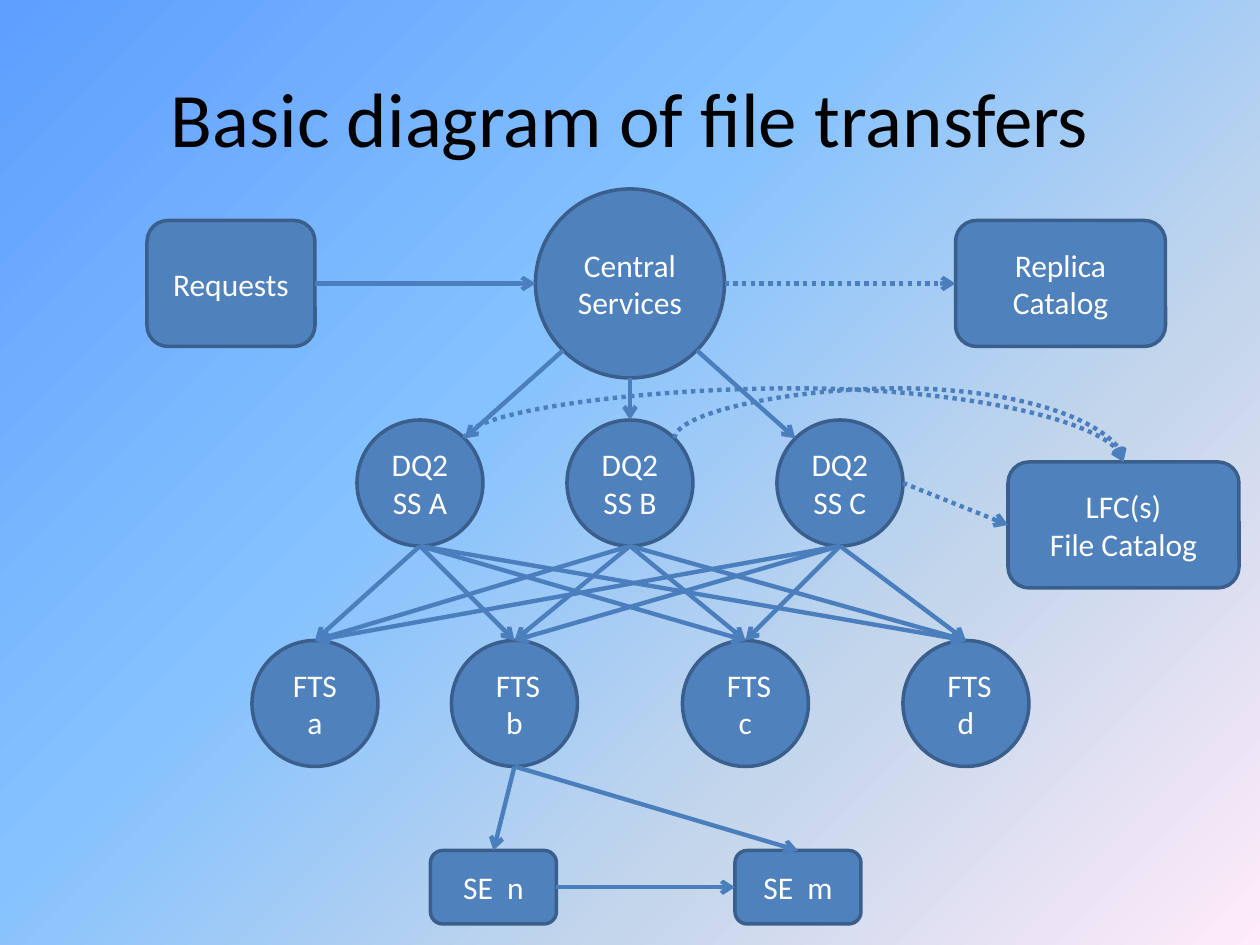
from copy import deepcopy

from lxml import etree
from pptx import Presentation
from pptx.dml.color import RGBColor
from pptx.enum.dml import MSO_LINE
from pptx.enum.shapes import MSO_CONNECTOR, MSO_SHAPE
from pptx.enum.text import MSO_ANCHOR, PP_ALIGN
from pptx.oxml.ns import qn
from pptx.util import Pt

ELLIPSE, ROUNDED = MSO_SHAPE.OVAL, MSO_SHAPE.ROUNDED_RECTANGLE
STRAIGHT, CURVE = MSO_CONNECTOR.STRAIGHT, MSO_CONNECTOR.CURVE
DOTTED = MSO_LINE.ROUND_DOT
CENTER, MIDDLE = PP_ALIGN.CENTER, MSO_ANCHOR.MIDDLE

FONT = "Calibri"
BLACK = RGBColor(0x00, 0x00, 0x00)
WHITE = RGBColor(0xFF, 0xFF, 0xFF)
NODE_FILL = RGBColor(0x4F, 0x81, 0xBD)
NODE_LINE = RGBColor(0x3A, 0x5F, 0x8C)
ARROW = RGBColor(0x4B, 0x7E, 0xBC)
BACKGROUND = [
    (0, RGBColor(0x5E, 0x9E, 0xFF)),
    (0.4, RGBColor(0x85, 0xC2, 0xFF)),
    (0.7, RGBColor(0xC4, 0xD6, 0xEB)),
    (1, RGBColor(0xFF, 0xEB, 0xFA)),
]

# Sites on a node, as fractions of its width and height
SITES = {
    "top": (0.5, 0), "left": (0, 0.5), "bottom": (0.5, 1), "right": (1, 0.5),
    "top left": (0.146, 0.146), "top right": (0.854, 0.146),
    "bottom left": (0.146, 0.854), "bottom right": (0.854, 0.854),
}
SIDES = ["top", "left", "bottom", "right"]
CURVE_BEND = -212100  # thousandths of a percent of the curve's height


def set_background(page):
    fill = page.background.fill
    fill.gradient()
    fill.gradient_angle = 315
    stop_list = page.element.find(".//" + qn("a:gsLst"))
    while len(stop_list) < len(BACKGROUND):
        stop_list.append(deepcopy(stop_list[0]))
    for stop, (position, color) in zip(fill.gradient_stops, BACKGROUND):
        stop.position = position
        stop.color.rgb = color


def format_text(frame, size, color):
    frame.word_wrap = True
    frame.vertical_anchor = MIDDLE
    for para in frame.paragraphs:
        para.alignment = CENTER
        for span in para.runs:
            span.font.name = FONT
            span.font.size = Pt(size)
            span.font.color.rgb = color


def add_title(page, box, text):
    title = page.shapes.title
    title.left, title.top, title.width, title.height = map(Pt, box)
    title.text_frame.text = text
    format_text(title.text_frame, 44, BLACK)


def add_node(page, kind, box, text):
    node = page.shapes.add_shape(kind, *map(Pt, box))
    node.shadow.inherit = False
    node.fill.solid()
    node.fill.fore_color.rgb = NODE_FILL
    node.line.color.rgb = NODE_LINE
    node.line.width = Pt(2)
    node.text_frame.text = text
    format_text(node.text_frame, 18, WHITE)
    return node


def add_row(page, kind, box, offsets, texts):
    """Nodes of one size; the box is that of the first, offsets run from it."""
    left, top, width, height = box
    return [add_node(page, kind, (left + offset, top, width, height), text)
            for offset, text in zip(offsets, texts)]


def site_point(node, site):
    across, down = SITES[site]
    return (int(node.left + across * node.width),
            int(node.top + down * node.height))


def format_arrow(arrow, dotted):
    arrow.line.color.rgb = ARROW
    arrow.line.width = Pt(2.5)
    if dotted:
        arrow.line.dash_style = DOTTED
    properties = arrow._element.spPr
    line = properties.find(qn("a:ln"))
    etree.SubElement(line, qn("a:tailEnd"), type="arrow")
    etree.SubElement(properties, qn("a:effectLst"))


def add_arrow(page, start, start_site, end, end_site, dotted=False):
    arrow = page.shapes.add_connector(
        STRAIGHT, *site_point(start, start_site), *site_point(end, end_site))
    if start.auto_shape_type == ROUNDED:
        arrow.begin_connect(start, SIDES.index(start_site))
    if end.auto_shape_type == ROUNDED:
        arrow.end_connect(end, SIDES.index(end_site))
    format_arrow(arrow, dotted)


def add_curve(page, start, end):
    """Dotted curve that rises from a top right site and falls on a top side."""
    start_x, start_y = site_point(start, "top right")
    end_x, end_y = site_point(end, "top")
    # The curve is laid out sideways, then turned about its centre
    middle_x, middle_y = (start_x + end_x) // 2, (start_y + end_y) // 2
    half_width, half_height = (end_y - start_y) // 2, (end_x - start_x) // 2
    curve = page.shapes.add_connector(
        CURVE, middle_x + half_width, middle_y - half_height,
        middle_x - half_width, middle_y + half_height)
    properties = curve._element.spPr
    properties.find(qn("a:xfrm")).set("rot", str(270 * 60000))
    guides = properties.find(qn("a:prstGeom")).find(qn("a:avLst"))
    etree.SubElement(guides, qn("a:gd"), name="adj1", fmla=f"val {CURVE_BEND}")
    format_arrow(curve, True)


def add_arrows(page, requests, central, replica, file_catalog,
               site_services, transfers, storage):
    # Central services
    add_arrow(page, requests, "right", central, "left")
    add_arrow(page, central, "right", replica, "left", dotted=True)
    for service, from_site, to_site in zip(
            site_services, ["bottom left", "bottom", "bottom right"],
            ["top right", "top", "top left"]):
        add_arrow(page, central, from_site, service, to_site)

    # Every site service to every transfer service
    for service in site_services:
        for transfer in transfers:
            add_arrow(page, service, "bottom", transfer, "top")

    # Storage elements
    for element in storage:
        add_arrow(page, transfers[1], "bottom", element, "top")
    add_arrow(page, storage[0], "right", storage[1], "left")

    # File catalog
    add_arrow(page, site_services[2], "right", file_catalog, "left", dotted=True)
    for service in site_services[:2]:
        add_curve(page, service, file_catalog)


def add_diagram(page):
    requests = add_node(page, ROUNDED, (84, 126, 96, 72), "Requests")
    central = add_node(page, ELLIPSE, (306, 108, 108, 108), "Central Services")
    replica = add_node(page, ROUNDED, (546, 126, 120, 72), "Replica\nCatalog")
    file_catalog = add_node(page, ROUNDED, (576, 264, 132, 72),
                            "LFC(s)\nFile Catalog")
    site_services = add_row(page, ELLIPSE, (204, 240, 72, 72), [0, 120, 240],
                            [f"DQ2 SS {letter}" for letter in "ABC"])
    transfers = add_row(page, ELLIPSE, (144, 366, 72, 72), [0, 114, 246, 372],
                        [" FTS \na", " FTS b", " FTS c", " FTS d"])
    storage = add_row(page, ROUNDED, (246, 486, 72, 42), [0, 174],
                      ["SE  n", "SE  m"])
    add_arrows(page, requests, central, replica, file_catalog,
               site_services, transfers, storage)


def main():
    deck = Presentation()
    deck.slide_width, deck.slide_height = Pt(720), Pt(540)
    page = deck.slides.add_slide(deck.slide_layouts.get_by_name("Title Only"))
    set_background(page)
    add_title(page, (36, 21.6, 648, 90), "Basic diagram of file transfers")
    add_diagram(page)
    deck.save("out.pptx")


if __name__ == "__main__":
    main()
